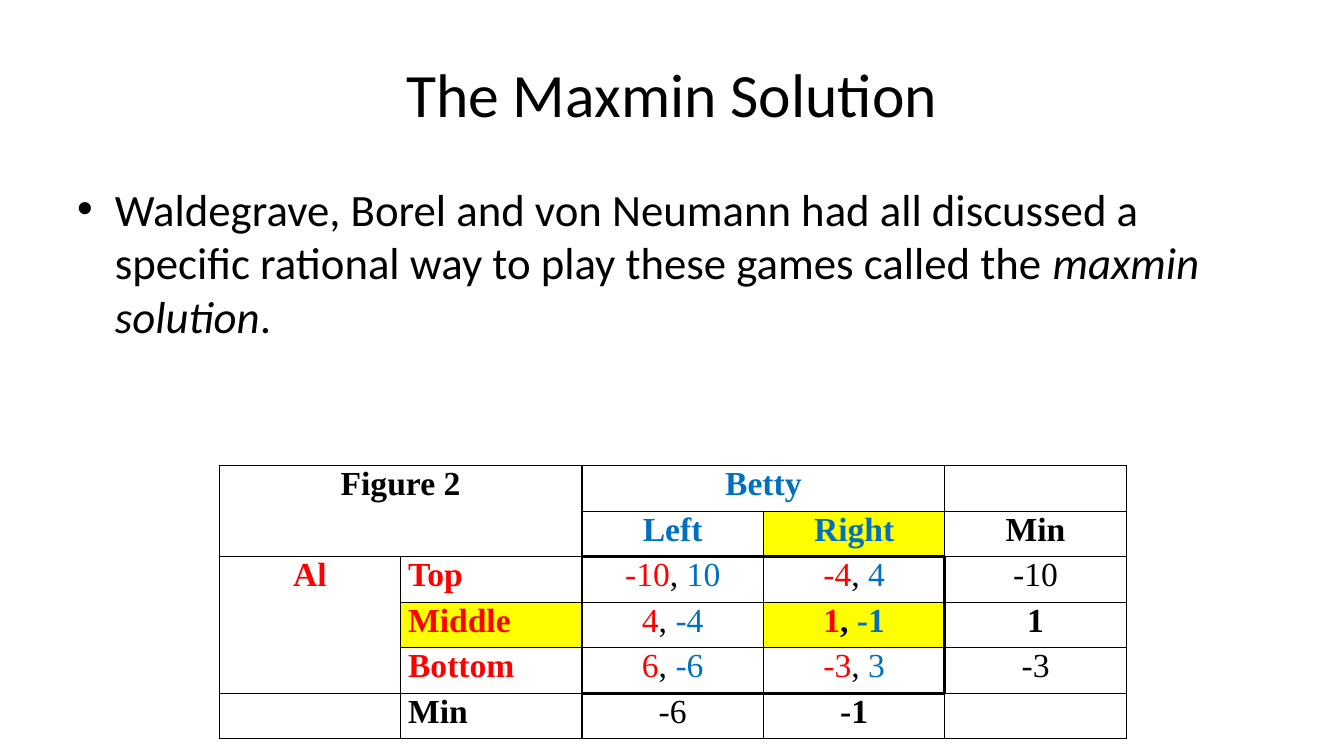
from lxml import etree
from pptx import Presentation
from pptx import util as u
from pptx.dml.color import RGBColor
from pptx.enum import text
from pptx.oxml.ns import qn

COLORS = {"black": "000000", "red": "FF0000", "blue": "0070C0", "yellow": "FFFF00"}
TITLE = "The Maxmin Solution"
BODY = [
    ("Waldegrave, Borel and von Neumann had all discussed a specific rational way "
     "to play these games called the ", False),
    ("maxmin solution", True),
    (".", False),
]


def label(words, color="black", bold=True):
    return [(words, color, bold)]


def payoff(al, betty, bold=False):
    return [(al, "red", bold), (", ", "black", bold), (betty, "blue", bold)]


ROWS = [
    [label("Figure 2"), [], label("Betty", "blue"), [], []],
    [[], [], label("Left", "blue"), label("Right", "blue"), label("Min")],
    [label("Al", "red"), label("Top", "red"), payoff("-10", "10"), payoff("-4", "4"),
     label("-10", bold=False)],
    [[], label("Middle", "red"), payoff("4", "-4"), payoff("1", "-1", True), label("1")],
    [[], label("Bottom", "red"), payoff("6", "-6"), payoff("-3", "3"),
     label("-3", bold=False)],
    [[], label("Min"), label("-6", bold=False), label("-1"), []],
]
MERGES = [((0, 0), (1, 1)), ((0, 2), (0, 3)), ((2, 0), (4, 0))]
HIGHLIGHTS = {(1, 3), (3, 1), (3, 3)}
PAYOFF_ROWS, PAYOFF_COLUMNS = range(2, 5), range(2, 4)
STRATEGY_COLUMN = 1
SIDES = {"a:lnL": (0, -1), "a:lnR": (0, 1), "a:lnT": (-1, 0), "a:lnB": (1, 0)}

LEFT, WIDTH = 48, 864
TABLE_LEFT, TABLE_TOP = 156.5, 332.75
COLUMN_WIDTH, ROW_HEIGHT = 129.6, 32.5


def add_run(paragraph, words, font, size, color="black", bold=False, italic=False):
    run = paragraph.add_run()
    run.text = words
    run.font.name = font
    run.font.size = u.Pt(size)
    run.font.bold = bold
    run.font.italic = italic
    run.font.color.rgb = RGBColor.from_string(COLORS[color])


def place(shape, left, top, width, height):
    shape.left, shape.top = u.Pt(left), u.Pt(top)
    shape.width, shape.height = u.Pt(width), u.Pt(height)


def add_title(slide):
    title = slide.shapes.title
    place(title, LEFT, 21.6, WIDTH, 90)
    title.text_frame.vertical_anchor = text.MSO_ANCHOR.MIDDLE
    paragraph = title.text_frame.paragraphs[0]
    paragraph.alignment = text.PP_ALIGN.CENTER
    add_run(paragraph, TITLE, "Calibri", 44)


def add_body(slide):
    box = slide.shapes.add_textbox(u.Pt(LEFT), u.Pt(126), u.Pt(WIDTH), u.Pt(356.4))
    box.text_frame.word_wrap = True
    paragraph = box.text_frame.paragraphs[0]
    paragraph.space_before = u.Pt(6.4)
    properties = paragraph._p.get_or_add_pPr()
    properties.set("marL", str(u.Pt(27)))
    properties.set("indent", str(u.Pt(-27)))
    etree.SubElement(properties, qn("a:buFont"), typeface="Arial")
    etree.SubElement(properties, qn("a:buChar"), char="•")
    for words, italic in BODY:
        add_run(paragraph, words, "Calibri", 32, italic=italic)


def in_payoffs(row, column):
    return row in PAYOFF_ROWS and column in PAYOFF_COLUMNS


def add_borders(cell, row, column):
    properties = cell._tc.get_or_add_tcPr()
    for side, (down, across) in SIDES.items():
        outline = in_payoffs(row, column) != in_payoffs(row + down, column + across)
        line = etree.SubElement(properties, qn(side), w=str(u.Pt(2.25 if outline else 1)))
        fill = etree.SubElement(line, qn("a:solidFill"))
        etree.SubElement(fill, qn("a:srgbClr"), val=COLORS["black"])


def add_game(slide):
    row_count, column_count = len(ROWS), len(ROWS[0])
    table = slide.shapes.add_table(
        row_count, column_count, u.Pt(TABLE_LEFT), u.Pt(TABLE_TOP),
        u.Pt(COLUMN_WIDTH * column_count), u.Pt(ROW_HEIGHT * row_count)).table
    table.first_row = table.horz_banding = False
    for column in table.columns:
        column.width = u.Pt(COLUMN_WIDTH)
    for row in table.rows:
        row.height = u.Pt(ROW_HEIGHT)
    for start, end in MERGES:
        table.cell(*start).merge(table.cell(*end))
    for row, entries in enumerate(ROWS):
        for column, runs in enumerate(entries):
            cell = table.cell(row, column)
            add_borders(cell, row, column)
            cell.margin_left = cell.margin_right = u.Pt(5.4)
            cell.margin_top = cell.margin_bottom = u.Pt(0)
            if (row, column) in HIGHLIGHTS:
                cell.fill.solid()
                cell.fill.fore_color.rgb = RGBColor.from_string(COLORS["yellow"])
            else:
                cell.fill.background()
            paragraph = cell.text_frame.paragraphs[0]
            if column != STRATEGY_COLUMN:
                paragraph.alignment = text.PP_ALIGN.CENTER
            for words, color, bold in runs:
                add_run(paragraph, words, "Times New Roman", 24, color, bold)


def main():
    presentation = Presentation()
    presentation.slide_width, presentation.slide_height = u.Pt(960), u.Pt(540)
    slide = presentation.slides.add_slide(presentation.slide_layouts[5])
    add_title(slide)
    add_body(slide)
    add_game(slide)
    presentation.save("out.pptx")


if __name__ == "__main__":
    main()
